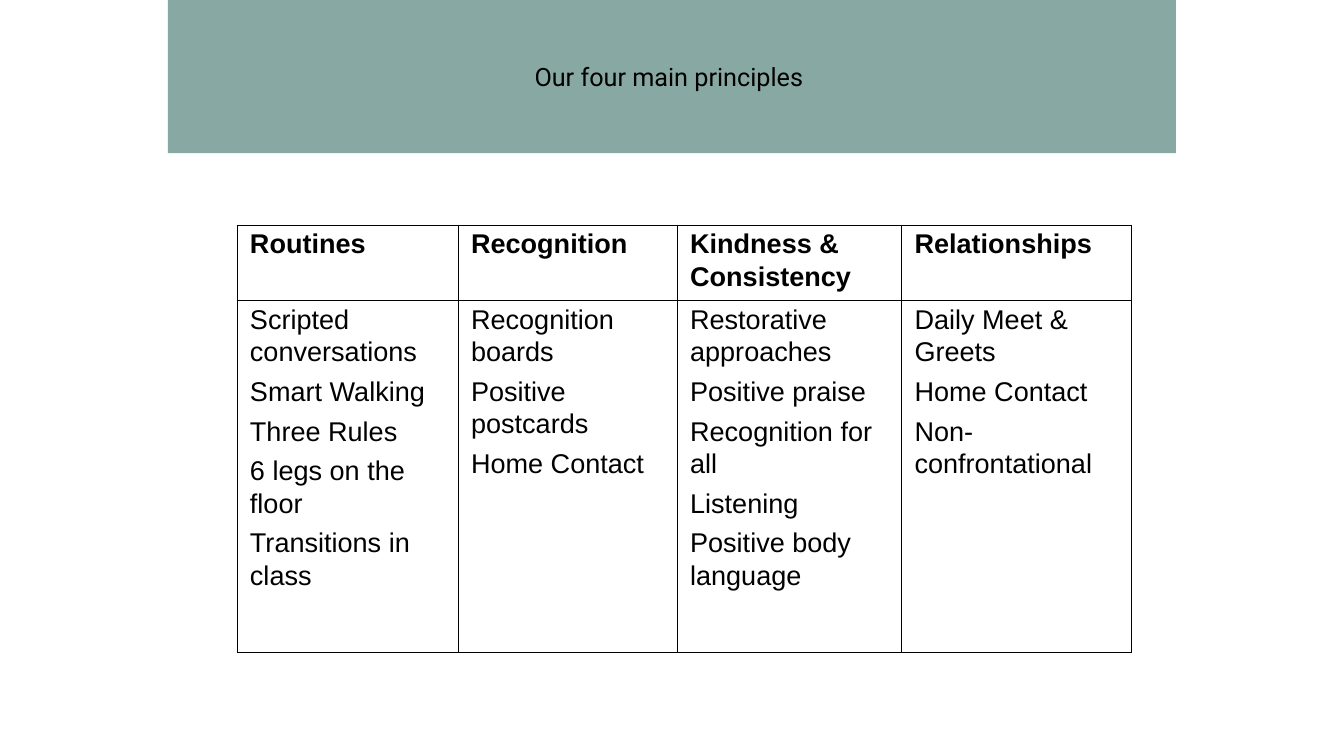
from dataclasses import dataclass

from lxml import etree
from pptx import Presentation
from pptx.dml.color import RGBColor
from pptx.enum.shapes import MSO_SHAPE
from pptx.enum.text import MSO_ANCHOR, PP_ALIGN
from pptx.oxml.ns import qn
from pptx.util import Inches, Pt

RECTANGLE = MSO_SHAPE.RECTANGLE
MIDDLE, TOP = MSO_ANCHOR.MIDDLE, MSO_ANCHOR.TOP
CENTER = PP_ALIGN.CENTER

SAGE, BLACK = "6B948C", "000000"
COLUMN_WIDTHS = (3.29, 3.26, 3.34, 3.42)
ROW_HEIGHTS = (1.12, 5.24)
CELL_FORMAT = {
    "margin_left": Inches(0.19),
    "margin_right": Inches(0.19),
    "margin_top": Inches(0.03),
    "margin_bottom": Inches(0),
    "vertical_anchor": TOP,
}
PARAGRAPH_FORMAT = {"line_spacing": 1.07, "space_after": Pt(8)}
BANNER_FORMAT = {
    "margin_left": Inches(0.15),
    "margin_right": Inches(0.15),
    "margin_top": Inches(0.15),
    "margin_bottom": Inches(0.15),
    "vertical_anchor": MIDDLE,
    "word_wrap": True,
}


@dataclass(frozen=True)
class Principle:
    name: str
    practices: tuple[str, ...]


PRINCIPLES = (
    Principle("Routines", (
        "Scripted conversations", "Smart Walking", "Three Rules",
        "6 legs on the floor", "Transitions in class")),
    Principle("Recognition", (
        "Recognition boards", "Positive postcards", "Home Contact")),
    Principle("Kindness & Consistency", (
        "Restorative approaches", "Positive praise", "Recognition for all",
        "Listening", "Positive body language")),
    Principle("Relationships", (
        "Daily Meet & Greets", "Home Contact", "Non-confrontational")),
)


def color(hex_value: str) -> RGBColor:
    return RGBColor.from_string(hex_value)


def apply_format(target, values: dict) -> None:
    for name, value in values.items():
        setattr(target, name, value)


def add_run(paragraph, text: str, font_name: str, size: float, bold: bool = False) -> None:
    run = paragraph.add_run()
    run.text = text
    apply_format(run.font, {"name": font_name, "size": Pt(size), "bold": bold})
    run.font.color.rgb = color(BLACK)


def add_banner(slide, text: str) -> None:
    banner = slide.shapes.add_shape(RECTANGLE, Inches(2.5), Inches(0), Inches(15), Inches(2.28))
    banner.shadow.inherit = False
    banner.line.fill.background()
    banner.fill.solid()
    banner.fill.fore_color.rgb = color(SAGE)
    fill_color = banner.fill._xPr.find(qn("a:solidFill"))[0]
    etree.SubElement(fill_color, qn("a:alpha"), val="80000")
    apply_format(banner.text_frame, BANNER_FORMAT)
    paragraph = banner.text_frame.paragraphs[0]
    paragraph.alignment = CENTER
    add_run(paragraph, text, "Roboto", 27)


def add_cell_borders(cell) -> None:
    """Put a thin black line on all four sides; call before setting the fill."""
    properties = cell._tc.get_or_add_tcPr()
    for side in ("lnL", "lnR", "lnT", "lnB"):
        line = etree.SubElement(properties, qn(f"a:{side}"), w=str(Pt(1)))
        fill = etree.SubElement(line, qn("a:solidFill"))
        etree.SubElement(fill, qn("a:srgbClr"), val=BLACK)


def fill_cell(cell, lines: tuple[str, ...], bold: bool) -> None:
    apply_format(cell, CELL_FORMAT)
    add_cell_borders(cell)
    cell.fill.background()
    frame = cell.text_frame
    for index, text in enumerate(lines):
        paragraph = frame.add_paragraph() if index else frame.paragraphs[0]
        apply_format(paragraph, PARAGRAPH_FORMAT)
        add_run(paragraph, text, "Arial", 29, bold)


def add_principles_table(slide, principles: tuple[Principle, ...]) -> None:
    table = slide.shapes.add_table(
        len(ROW_HEIGHTS), len(principles), Inches(3.53), Inches(3.35),
        Inches(sum(COLUMN_WIDTHS)), Inches(sum(ROW_HEIGHTS))).table
    apply_format(table, {"first_row": False, "horz_banding": False})
    for row, height in zip(table.rows, ROW_HEIGHTS):
        row.height = Inches(height)
    for index, (principle, width) in enumerate(zip(principles, COLUMN_WIDTHS)):
        table.columns[index].width = Inches(width)
        fill_cell(table.cell(0, index), (principle.name,), bold=True)
        fill_cell(table.cell(1, index), principle.practices, bold=False)


def main() -> None:
    presentation = Presentation()
    presentation.slide_width = Inches(20)
    presentation.slide_height = Inches(11.25)
    slide = presentation.slides.add_slide(presentation.slide_layouts[6])
    add_banner(slide, "Our four main principles ")
    add_principles_table(slide, PRINCIPLES)
    presentation.save("out.pptx")


if __name__ == "__main__":
    main()
